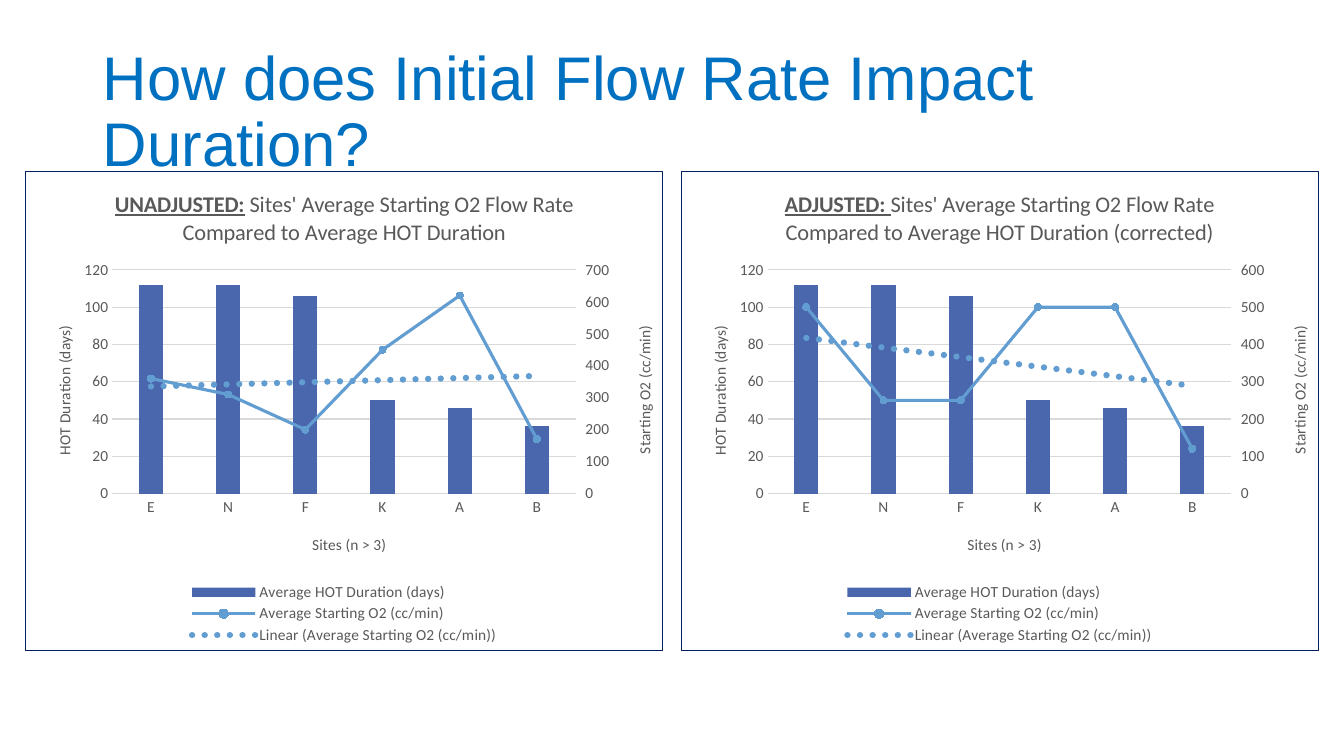
import copy

from pptx import Presentation
from pptx import util as u
from pptx.chart import axis as ax
from pptx.chart.data import CategoryChartData
from pptx.dml.color import RGBColor
from pptx.enum import chart as ch, text
from pptx.oxml import parse_xml
from pptx.oxml.ns import nsdecls, qn

NS = nsdecls("c", "a")
BLUE, BAR, LINE, GREY, GRID = "0070C0", "4A66AC", "629DD1", "595959", "D9D9D9"
SITES = ["E", "N", "F", "K", "A", "B"]
DURATION = [112, 112, 106, 50, 46, 36]
# Heading lead, heading rest, starting flow by site, top of the right axis
PANELS = [
    ("UNADJUSTED:", " Sites' Average Starting O2 Flow Rate Compared to Average HOT Duration",
     [360, 310, 200, 450, 620, 170], 700),
    ("ADJUSTED: ", "Sites' Average Starting O2 Flow Rate Compared to Average HOT Duration (corrected)",
     [500, 250, 250, 500, 500, 120], 600),
]


def rgb(value):
    return RGBColor.from_string(value)


def style(font, size, color=GREY, name="Calibri", bold=False):
    font.size, font.name, font.bold = u.Pt(size), name, bold
    font.color.rgb = rgb(color)


def drop(parent, tag):
    for old in parent.findall(qn(tag)):
        parent.remove(old)


def place(parent, after, x, y, w=None, h=None):
    """Put a chart part at fractions of the chart area."""
    drop(parent, "c:layout")
    target = '<c:layoutTarget val="inner"/>' if after is None else ""
    sizes = f'<c:w val="{w}"/><c:h val="{h}"/>' if w else ""
    layout = parse_xml(
        f'<c:layout {NS}><c:manualLayout>{target}<c:xMode val="edge"/><c:yMode val="edge"/>'
        f'<c:x val="{x}"/><c:y val="{y}"/>{sizes}</c:manualLayout></c:layout>')
    if after is None:
        parent.insert(0, layout)
    else:
        parent.find(qn(after)).addnext(layout)


def add_title(s, left, top, width, height):
    sp = s.shapes.title
    sp.left, sp.top, sp.width, sp.height = map(u.Inches, (left, top, width, height))
    tf = sp.text_frame
    tf.text = "How does Initial Flow Rate Impact Duration?"
    tf.word_wrap, tf.auto_size = True, text.MSO_AUTO_SIZE.NONE
    tf.vertical_anchor = text.MSO_ANCHOR.MIDDLE
    p = tf.paragraphs[0]
    p.alignment, p.line_spacing = text.PP_ALIGN.LEFT, 0.9
    style(p.font, 44, BLUE, "Arial")


def format_axis(axis, title, x, y, turned=False):
    axis.major_tick_mark = axis.minor_tick_mark = ch.XL_TICK_MARK.NONE
    style(axis.tick_labels.font, 11)
    tf = axis.axis_title.text_frame
    tf.text = title
    style(tf.paragraphs[0].font, 11)
    title_xml = axis.axis_title._element
    if turned:
        body = title_xml.find(".//" + qn("a:bodyPr"))
        body.set("rot", "-5400000")
        body.set("vert", "horz")
    place(title_xml, "c:tx", x, y)


def scale(axis, top, unit):
    axis.minimum_scale, axis.maximum_scale, axis.major_unit = 0, top, unit


def add_second_axes(chart):
    """Move the flow series to a line plot on its own axes; return its value axis."""
    area = chart.element.find(".//" + qn("c:plotArea"))
    bars = area.find(qn("c:barChart"))
    flow = bars.findall(qn("c:ser"))[1]
    drop(flow, "c:invertIfNegative")
    lines = parse_xml(
        f'<c:lineChart {NS}><c:grouping val="standard"/><c:varyColors val="0"/>'
        '<c:marker val="1"/><c:axId val="5001"/><c:axId val="5002"/></c:lineChart>')
    lines.insert(2, flow)
    bars.addnext(lines)
    cat, val = (copy.deepcopy(area.find(qn(tag))) for tag in ("c:catAx", "c:valAx"))
    for axis, own, other in ((cat, "5001", "5002"), (val, "5002", "5001")):
        axis.find(qn("c:axId")).set("val", own)
        axis.find(qn("c:crossAx")).set("val", other)
    val.find(qn("c:axPos")).set("val", "r")
    val.find(qn("c:crosses")).set("val", "max")
    area.findall(qn("c:valAx"))[-1].addnext(val)
    val.addnext(cat)
    ax.CategoryAxis(cat).visible = False
    right = ax.ValueAxis(val)
    right.has_major_gridlines = False
    return right


def format_flow(series):
    series.smooth = False
    series.format.line.color.rgb = rgb(LINE)
    series.format.line.width = u.Pt(2.25)
    marker = series.marker
    marker.style, marker.size = ch.XL_MARKER_STYLE.CIRCLE, 5
    marker.format.fill.solid()
    marker.format.fill.fore_color.rgb = rgb(LINE)
    marker.format.line.color.rgb = rgb(LINE)
    series._element.find(qn("c:cat")).addprevious(parse_xml(
        f'<c:trendline {NS}><c:spPr><a:ln w="{u.Pt(4.5)}" cap="rnd"><a:solidFill>'
        f'<a:srgbClr val="{LINE}"/></a:solidFill><a:prstDash val="sysDot"/></a:ln></c:spPr>'
        '<c:trendlineType val="linear"/><c:dispRSqr val="0"/><c:dispEq val="0"/></c:trendline>'))


def add_panel(s, left, top, width, height, lead, rest, flow, flow_top):
    data = CategoryChartData()
    data.categories = SITES
    data.add_series("Average HOT Duration (days)", DURATION)
    data.add_series("Average Starting O2 (cc/min)", flow)
    chart = s.shapes.add_chart(ch.XL_CHART_TYPE.COLUMN_CLUSTERED,
                               *map(u.Inches, (left, top, width, height)), data).chart
    style(chart.font, 11, "000000")

    # Frame
    chart.element.find(qn("c:chart")).addnext(parse_xml(
        f'<c:spPr {NS}><a:solidFill><a:srgbClr val="FFFFFF"/></a:solidFill>'
        f'<a:ln w="{u.Pt(0.75)}"><a:solidFill><a:srgbClr val="002060"/></a:solidFill></a:ln></c:spPr>'))

    # Heading
    p = chart.chart_title.text_frame.paragraphs[0]
    for words, strong in ((lead, True), (rest, False)):
        r = p.add_run()
        r.text = words
        style(r.font, 16, bold=strong)
        r.font.underline = strong
    chart.chart_title.include_in_layout = False

    # Columns and left axis
    plot = chart.plots[0]
    plot.gap_width, plot.overlap, plot.vary_by_categories = 219, -27, False
    fill = plot.series[0].format.fill
    fill.solid()
    fill.fore_color.rgb = rgb(BAR)
    value, category = chart.value_axis, chart.category_axis
    value.format.line.fill.background()
    right = add_second_axes(chart)
    scale(value, 120, 20)
    grid = value.major_gridlines.format.line
    for line in (grid, category.format.line):
        line.color.rgb, line.width = rgb(GRID), u.Pt(0.75)
    format_axis(value, "HOT Duration (days)", 0.04, 0.315, turned=True)
    format_axis(category, "Sites (n > 3)", 0.445, 0.75)

    # Flow line and right axis
    scale(right, flow_top, 100)
    format_axis(right, "Starting O2 (cc/min)", 0.95, 0.315, turned=True)
    right.major_tick_mark = ch.XL_TICK_MARK.OUTSIDE
    format_flow(chart.plots[1].series[0])

    # Plot area and legend
    place(chart.element.find(".//" + qn("c:plotArea")), None, 0.136, 0.205, 0.727, 0.467)
    chart.has_legend = True
    legend = chart.legend
    legend.position = ch.XL_LEGEND_POSITION.BOTTOM
    legend.include_in_layout = False
    style(legend.font, 11)
    place(legend._element, "c:legendPos", 0.255, 0.853, 0.49, 0.14)


def main():
    prs = Presentation()
    prs.slide_width, prs.slide_height = u.Inches(13.33), u.Inches(7.5)
    s = prs.slides.add_slide(prs.slide_layouts[5])
    add_title(s, 0.92, 0.4, 11.5, 1.45)
    for i, panel in enumerate(PANELS):
        add_panel(s, 0.25 + 6.5 * i, 1.7, 6.33, 4.76, *panel)
    prs.save("out.pptx")


if __name__ == "__main__":
    main()
